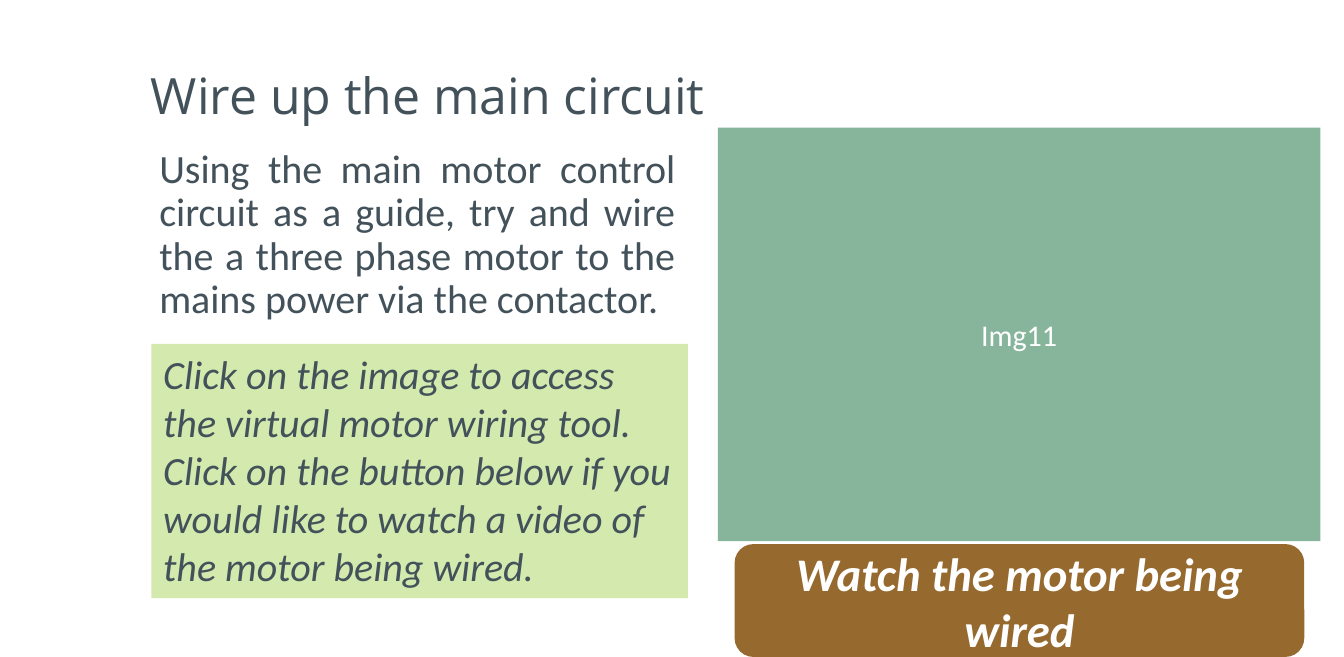
import pptx
import pptx.util
import pptx.dml.color
import pptx.enum.shapes
import pptx.enum.text

Pt = pptx.util.Pt
SHAPE = pptx.enum.shapes.MSO_SHAPE
ALIGN = pptx.enum.text.PP_ALIGN
ANCHOR = pptx.enum.text.MSO_ANCHOR

SLIDE_SIZE = (806.4, 394)
COLOURS = {
    "slate": "43525A",
    "lime": "D3E9AD",
    "sage": "86B59C",
    "brown": "96692F",
    "white": "FFFFFF",
}

BLOCKS = [
    {
        "text": "Wire up the main circuit",
        "box": (83.5, 20.9, 604, 76.3),
        "colour": "slate",
        "anchor": ANCHOR.MIDDLE,
        "font": {"name": "Open Sans", "size": Pt(30)},
        "paragraph": {"line_spacing": 0.9},
    },
    {
        "text": "Using the main motor control circuit as a guide, try and wire "
                "the a three phase motor to the mains power via the contactor.",
        "box": (88.5, 85.9, 324, 131),
        "colour": "slate",
        "anchor": ANCHOR.TOP,
        "font": {"size": Pt(24)},
        "paragraph": {"alignment": ALIGN.JUSTIFY, "line_spacing": 0.9,
                      "space_before": Pt(7.3)},
    },
    {
        "text": "Click on the image to access the virtual motor wiring tool. "
                "Click on the button below if you would like to watch a video "
                "of the motor being wired.",
        "box": (90.8, 206.2, 322, 152.6),
        "shape": SHAPE.RECTANGLE,
        "fill": "lime",
        "colour": "slate",
        "anchor": ANCHOR.TOP,
        "font": {"size": Pt(24), "italic": True},
        "paragraph": {"alignment": ALIGN.LEFT},
    },
    {
        "text": "Img11",
        "box": (430.7, 76.5, 361.6, 248),
        "shape": SHAPE.RECTANGLE,
        "fill": "sage",
        "colour": "white",
        "anchor": ANCHOR.MIDDLE,
        "font": {"size": Pt(18)},
        "paragraph": {"alignment": ALIGN.CENTER},
    },
    {
        "text": "Watch the motor being wired",
        "box": (440.8, 326.3, 341.8, 67.7),
        "shape": SHAPE.ROUNDED_RECTANGLE,
        "fill": "brown",
        "colour": "white",
        "anchor": ANCHOR.MIDDLE,
        "font": {"size": Pt(28), "bold": True, "italic": True},
        "paragraph": {"alignment": ALIGN.CENTER},
    },
]


def rgb(name):
    return pptx.dml.color.RGBColor.from_string(COLOURS[name])


def set_attributes(target, values):
    for name, value in values.items():
        setattr(target, name, value)


def add_block(s, block):
    box = [Pt(v) for v in block["box"]]
    if "shape" in block:
        sp = s.shapes.add_shape(block["shape"], *box)
        sp.shadow.inherit = False
        sp.fill.solid()
        sp.fill.fore_color.rgb = rgb(block["fill"])
        sp.line.fill.background()
    else:
        sp = s.shapes.add_textbox(*box)
    tf = sp.text_frame
    set_attributes(tf, {"word_wrap": True, "vertical_anchor": block["anchor"]})
    p = tf.paragraphs[0]
    set_attributes(p, block["paragraph"])
    r = p.add_run()
    r.text = block["text"]
    set_attributes(r.font, {"name": "Calibri", **block["font"]})
    r.font.color.rgb = rgb(block["colour"])


def main():
    prs = pptx.Presentation()
    prs.slide_width, prs.slide_height = [Pt(v) for v in SLIDE_SIZE]
    s = prs.slides.add_slide(prs.slide_layouts[6])
    for block in BLOCKS:
        add_block(s, block)
    prs.save("out.pptx")


if __name__ == "__main__":
    main()
